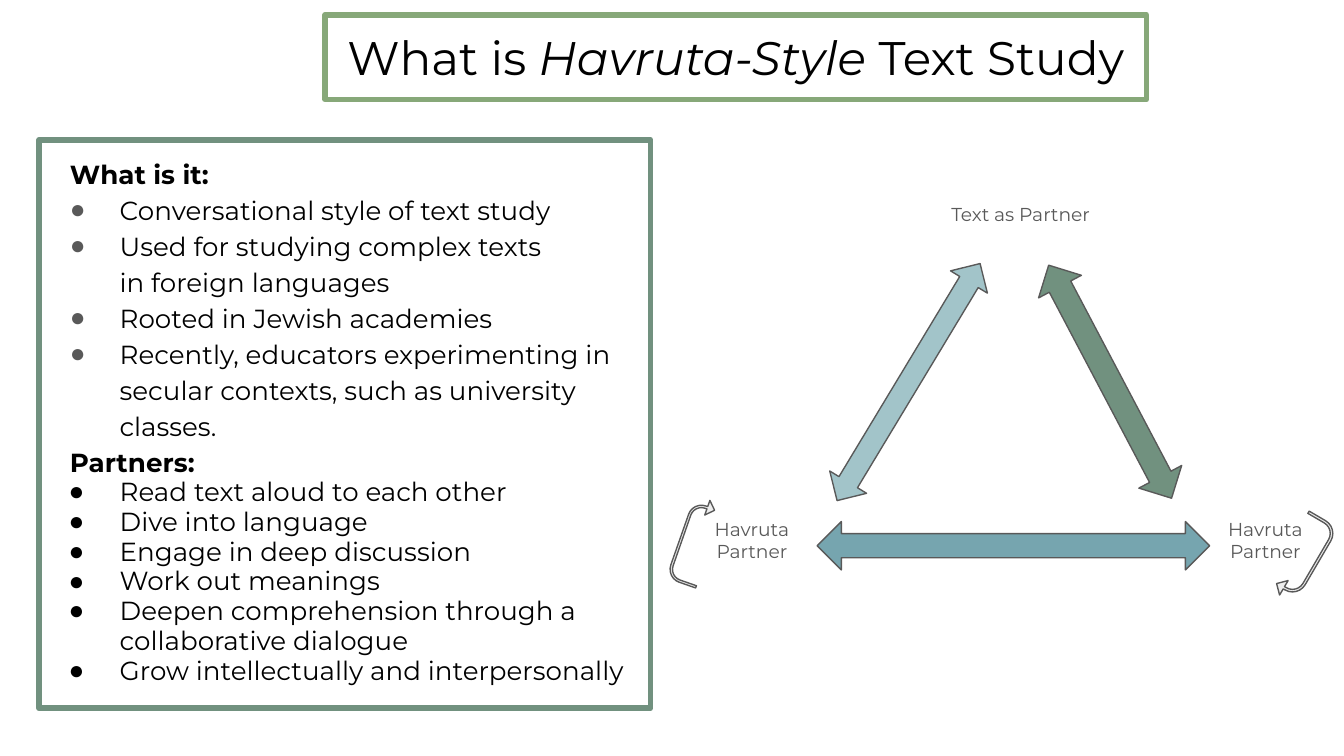
"""Build the slide on Havruta-style text study."""
from lxml import etree
from pptx import Presentation
from pptx.dml.color import RGBColor
from pptx.enum.shapes import MSO_SHAPE
from pptx.enum.text import MSO_ANCHOR, MSO_AUTO_SIZE, PP_ALIGN
from pptx.oxml.ns import qn
from pptx.util import Inches, Pt

CENTER, LEFT = PP_ALIGN.CENTER, PP_ALIGN.LEFT
TOP, MIDDLE = MSO_ANCHOR.TOP, MSO_ANCHOR.MIDDLE
NO_FIT = MSO_AUTO_SIZE.NONE
DOUBLE, UTURN = MSO_SHAPE.LEFT_RIGHT_ARROW, MSO_SHAPE.U_TURN_ARROW
BLACK = RGBColor(0x00, 0x00, 0x00)
GRAY = RGBColor(0x59, 0x59, 0x59)
PALE = RGBColor(0xEE, 0xEE, 0xEE)
LIME = RGBColor(0x87, 0xA8, 0x79)
GREEN = RGBColor(0x71, 0x91, 0x7F)
SKY = RGBColor(0xA2, 0xC4, 0xC9)
TEAL = RGBColor(0x76, 0xA5, 0xAF)
FONT = "Montserrat"
NBSP = chr(160)

prs = Presentation()
prs.slide_width = Inches(10)
prs.slide_height = prs.slide_width * 9 // 16
s = prs.slides.add_slide(prs.slide_layouts[1])


def place(x, y, w, h):
    """Turn percentages of the slide into left, top, width and height."""
    W, H = prs.slide_width, prs.slide_height
    return [int(v * side / 100) for v, side in ((x, W), (y, H), (w, W), (h, H))]


def style(font, size, color, bold=False):
    """Set the font, size, colour and weight."""
    font.name, font.size, font.bold = FONT, Pt(size), bold
    font.color.rgb = color


title, body = s.shapes.title, s.placeholders[1]
for sp, area, color, anchor in (
    (title, (24.2, 1.96, 61.1, 11.2), LIME, MIDDLE),
    (body, (2.9, 18.5, 45.5, 75.2), GREEN, TOP),
):
    sp.left, sp.top, sp.width, sp.height = place(*area)
    sp.line.color.rgb, sp.line.width = color, Pt(3)
    tf = sp.text_frame
    tf.word_wrap, tf.auto_size, tf.vertical_anchor = True, NO_FIT, anchor
    tf.margin_left = tf.margin_right = tf.margin_top = tf.margin_bottom = Inches(0.1)

p = title.text_frame.paragraphs[0]
p.alignment = CENTER
for text, italic in (("What is ", False), ("Havruta-Style ", True), ("Text Study", False)):
    r = p.add_run()
    r.text = text
    style(r.font, 25.2, BLACK)
    r.font.italic = italic

sections = (
    ("What is it:", GRAY, 1.15, 0.37, (
        "Conversational style of text study",
        f"Used for studying complex texts in{NBSP}foreign languages",
        "Rooted in Jewish academies",
        "Recently, educators experimenting in secular contexts, such as university classes.",
    )),
    ("Partners:", BLACK, 0.95, 0.38, (
        f"Read text aloud to each other{NBSP}",
        "Dive into language",
        "Engage in deep discussion",
        "Work out meanings",
        "Deepen comprehension through a collaborative dialogue",
        "Grow intellectually and interpersonally",
    )),
)
tf = body.text_frame
for heading, color, spacing, hang, items in sections:
    for text in (heading, *items):
        is_heading = text == heading
        p = tf.paragraphs[0] if text == sections[0][0] else tf.add_paragraph()
        p.text = text
        p.alignment = LEFT
        p.space_before = p.space_after = Pt(0)
        p.line_spacing = 1.15 if is_heading else spacing
        pPr = p._p.get_or_add_pPr()
        pPr.set("marL", str(Inches(0.13 if is_heading else 0.5)))
        pPr.set("indent", str(0 if is_heading else -Inches(hang)))
        if is_heading:
            etree.SubElement(pPr, qn("a:buNone"))
        else:
            buClr = etree.SubElement(pPr, qn("a:buClr"))
            etree.SubElement(buClr, qn("a:srgbClr"), val=str(color))
            etree.SubElement(pPr, qn("a:buFont"), typeface="Arial")
            etree.SubElement(pPr, qn("a:buChar"), char="●")
        style(p.runs[0].font, 14, BLACK, is_heading)

half = (0.5, 0.5)
bend = (0.077, 0.25, 0.25, 0.438, 0.75)
for kind, area, angle, color, adjustments in (
    (DOUBLE, (57.3, 47.7, 20.6, 5.7), 121.1, SKY, half),
    (DOUBLE, (60.8, 69, 29.2, 6.4), 0, TEAL, half),
    (DOUBLE, (72.8, 47.3, 19.6, 6.4), 62.2, GREEN, half),
    (UTURN, (93.6, 71.5, 6.5, 4.45), 120.3, PALE, bend),
    (UTURN, (48.5, 69.6, 6.5, 4.1), 289.3, PALE, bend),
):
    sp = s.shapes.add_shape(kind, *place(*area))
    sp.shadow.inherit = False
    sp.rotation = angle
    sp.fill.solid()
    sp.fill.fore_color.rgb = color
    sp.line.color.rgb, sp.line.width = GRAY, Pt(0.75)
    for i, value in enumerate(adjustments):
        sp.adjustments[i] = value

for text, area, align in (
    ("Text as Partner", (69.8, 25.4, 15.4, 6.6), LEFT),
    ("Havruta Partner", (90, 66.7, 8.3, 9.6), CENTER),
    ("Havruta Partner", (51.8, 66.7, 8.3, 9.6), CENTER),
):
    tf = s.shapes.add_textbox(*place(*area)).text_frame
    tf.word_wrap = True
    tf.margin_left = tf.margin_right = tf.margin_top = tf.margin_bottom = Inches(0.1)
    tf.text = text
    p = tf.paragraphs[0]
    p.alignment = align
    style(p.runs[0].font, 10, GRAY)

prs.save("out.pptx")
